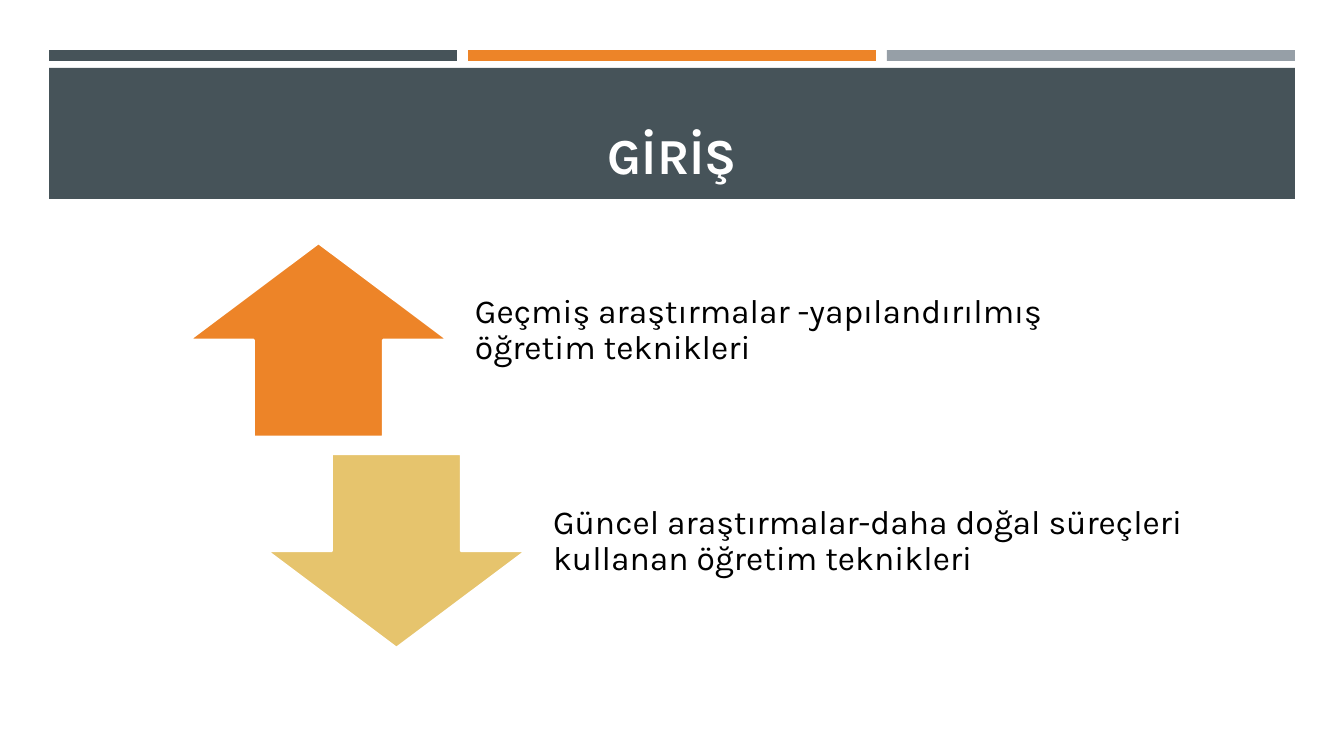
"""Build the GİRİŞ slide with two opposing arrows."""
from pptx import Presentation
from pptx.dml.color import RGBColor
from pptx.enum.shapes import MSO_SHAPE
from pptx.enum.text import MSO_ANCHOR, PP_ALIGN
from pptx.util import Pt

SLATE = RGBColor(0x46, 0x53, 0x59)
ORANGE = RGBColor(0xED, 0x84, 0x28)
GREY = RGBColor(0x96, 0x9F, 0xA7)
SAND = RGBColor(0xE6, 0xC4, 0x6D)
WHITE = RGBColor(0xFF, 0xFF, 0xFF)
BLACK = RGBColor(0, 0, 0)

TITLE = "GİRİŞ"
STRIPES = [SLATE, ORANGE, GREY]
ITEMS = [
    (MSO_SHAPE.UP_ARROW, ORANGE,
     "Geçmiş araştırmalar -yapılandırılmış öğretim teknikleri"),
    (MSO_SHAPE.DOWN_ARROW, SAND,
     "Güncel araştırmalar-daha doğal süreçleri kullanan öğretim teknikleri"),
]
FONT = "Karla"
SCALE = 914400 / 100.8


def px(*sizes):
    """Turn px lengths into EMU."""
    return [round(size * SCALE) for size in sizes]


def draw(shapes, kind, box, fill, edge=None):
    """Add a filled preset shape."""
    shape = shapes.add_shape(kind, *px(*box))
    shape.shadow.inherit = False
    shape.fill.solid()
    shape.fill.fore_color.rgb = fill
    if edge:
        shape.line.color.rgb = edge
        shape.line.width = Pt(1.75)
    else:
        shape.line.fill.background()


def style(frame, size, color, bold=False):
    """Format every run in a text frame."""
    for para in frame.paragraphs:
        for run in para.runs:
            run.font.name = FONT
            run.font.size = Pt(size)
            run.font.bold = bold
            run.font.color.rgb = color


def label(shapes, box, text):
    """Add the text beside an arrow."""
    frame = shapes.add_textbox(*px(*box)).text_frame
    frame.word_wrap = True
    frame.vertical_anchor = MSO_ANCHOR.MIDDLE
    inset, = px(19)
    frame.margin_left = frame.margin_right = frame.margin_bottom = inset
    frame.margin_top = 0
    frame.text = text
    frame.paragraphs[0].line_spacing = 0.9
    style(frame, 24, BLACK)


def head(shapes):
    """Set the title on top of its band."""
    title = shapes.title
    title.left, title.top, title.width, title.height = px(65, 78, 1215, 112)
    frame = title.text_frame
    frame.word_wrap = True
    frame.vertical_anchor = MSO_ANCHOR.BOTTOM
    frame.text = TITLE
    frame.paragraphs[0].alignment = PP_ALIGN.CENTER
    style(frame, 36, WHITE, True)
    shapes.element.append(title.element)


def main():
    """Compose and save the slide."""
    deck = Presentation()
    deck.slide_width, deck.slide_height = px(1344, 756)
    shapes = deck.slides.add_slide(deck.slide_layouts[5]).shapes
    for i, color in enumerate(STRIPES):
        draw(shapes, MSO_SHAPE.RECTANGLE, (49 + 419 * i, 50, 408, 11), color)
    draw(shapes, MSO_SHAPE.RECTANGLE, (49, 68, 1246, 131), SLATE)
    head(shapes)
    for i, (kind, color, text) in enumerate(ITEMS):
        left, top = 189 + 78 * i, 243 + 211 * i
        draw(shapes, kind, (left, top, 259, 194), color, WHITE)
        label(shapes, (left + 267, top, 680, 194), text)
    deck.save("out.pptx")


if __name__ == "__main__":
    main()
